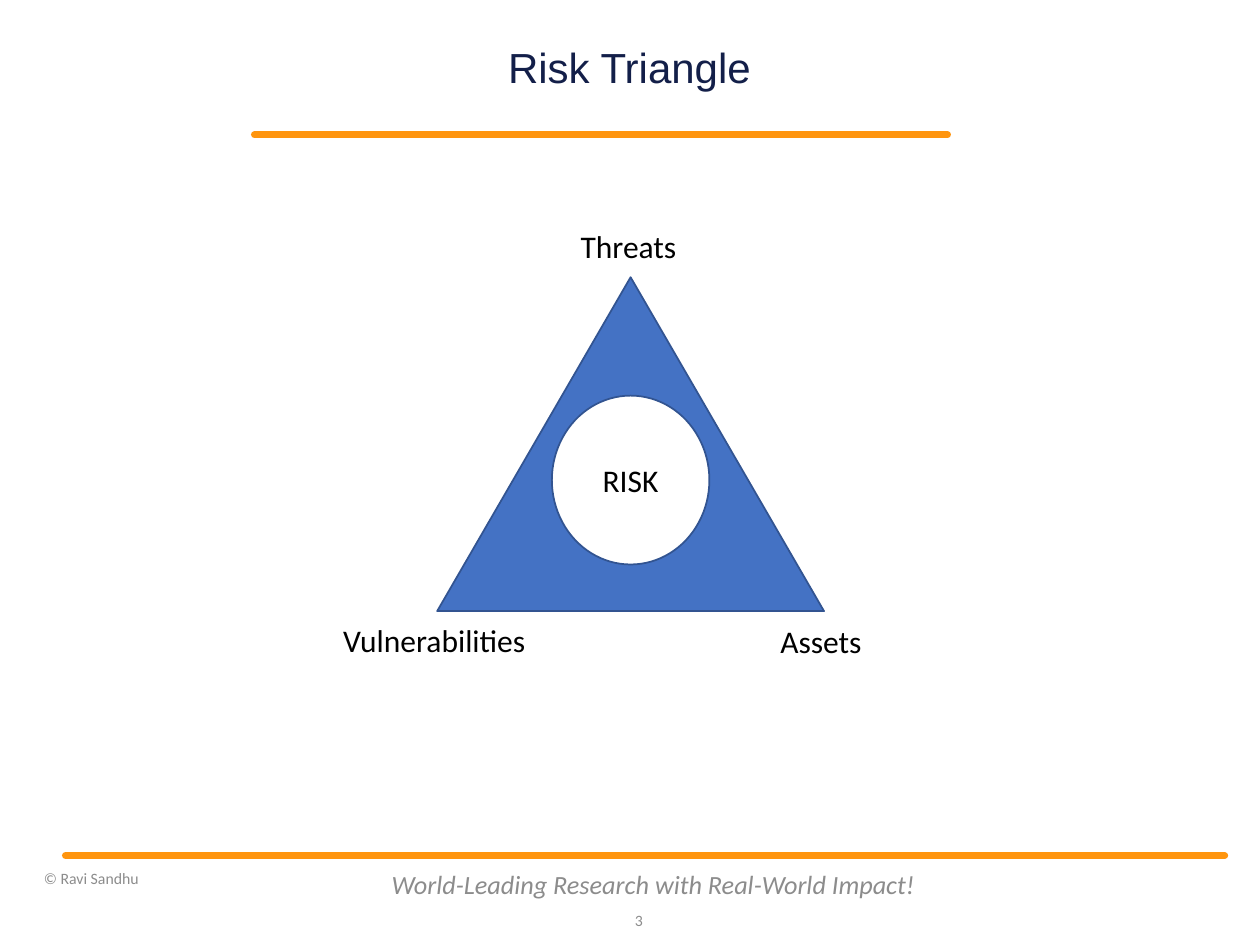
from pptx import Presentation
from pptx.dml.color import RGBColor
from pptx.enum.shapes import MSO_CONNECTOR, MSO_SHAPE
from pptx.enum.text import MSO_ANCHOR as ANCHOR, PP_ALIGN as ALIGN
from pptx.oxml.ns import qn
from pptx.util import Inches, Pt

ORANGE, NAVY, GRAY = "FF950E", "131F49", "8C8C8C"
BLUE, OUTLINE, WHITE, BLACK = "4472C4", "325491", "FFFFFF", "000000"


def rgb(value):
    """Turn a hex string into a colour."""
    return RGBColor.from_string(value)


def set_text(s, text, size, color, align=ALIGN.LEFT, font="Calibri", italic=False):
    """Write one formatted paragraph into a shape and return it."""
    s.text_frame.text = text
    p = s.text_frame.paragraphs[0]
    p.alignment = align
    f = p.runs[0].font
    f.name, f.size, f.italic = font, Pt(size), italic
    f.color.rgb = rgb(color)
    return p


def add_text(slide, x, y, w, h, text, size, color, wrap=True, anchor=ANCHOR.MIDDLE, **style):
    """Add a text box and return it."""
    s = slide.shapes.add_textbox(Inches(x), Inches(y), Inches(w), Inches(h))
    s.text_frame.word_wrap = wrap
    s.text_frame.vertical_anchor = anchor
    set_text(s, text, size, color, **style)
    return s


def add_rule(slide, x, y, w):
    """Add a thick horizontal rule with round ends."""
    s = slide.shapes.add_connector(
        MSO_CONNECTOR.STRAIGHT, Inches(x), Inches(y), Inches(x + w), Inches(y))
    s.line.color.rgb = rgb(ORANGE)
    s.line.width = Pt(4)
    sp_pr = s._element.spPr
    sp_pr.find(qn("a:ln")).set("cap", "rnd")
    sp_pr.append(sp_pr.makeelement(qn("a:effectLst"), {}))


def add_solid(slide, kind, x, y, w, h, fill):
    """Add a filled, thinly outlined preset shape and return it."""
    s = slide.shapes.add_shape(kind, Inches(x), Inches(y), Inches(w), Inches(h))
    s.shadow.inherit = False
    s.fill.solid()
    s.fill.fore_color.rgb = rgb(fill)
    s.line.color.rgb = rgb(OUTLINE)
    s.line.width = Pt(1)
    return s


def add_header(slide, x, y, w, h):
    """Place the title in its box and the rule below it."""
    s = add_text(slide, x, y, w, h, "Risk Triangle", 24, NAVY, align=ALIGN.CENTER, font="Arial")
    tf = s.text_frame
    tf.margin_left = tf.margin_right = tf.margin_top = tf.margin_bottom = 0
    tf.paragraphs[0].line_spacing = 0.9
    add_rule(slide, x - 0.35, y + h + 0.26, 5.5)


def add_risk_triangle(slide, x, y, w, h):
    """Place the triangle, its central circle and the corner labels."""
    add_solid(slide, MSO_SHAPE.ISOSCELES_TRIANGLE, x, y, w, h, BLUE)
    d = 1.25
    circle = add_solid(slide, MSO_SHAPE.OVAL, x + (w - d) / 2, y + 0.94, d, 1.34, WHITE)
    circle.text_frame.vertical_anchor = ANCHOR.MIDDLE
    set_text(circle, "RISK", 18, BLACK, align=ALIGN.CENTER)
    corners = [
        ("Threats", w / 2 - 0.01, -0.45, 0.97),
        ("Vulnerabilities", -0.01, h + 0.03, 1.67),
        ("Assets", w - 0.02, h + 0.04, 0.85),
    ]
    for label, center, top, width in corners:
        add_text(slide, x + center - width / 2, y + top, width, 0.4, label, 18, BLACK,
                 wrap=False, anchor=ANCHOR.TOP)


def add_footer(slide, x, y, w):
    """Place the footer rule, motto, page number and copyright line."""
    add_rule(slide, x, y, w)
    add_text(slide, x + 2.48, y + 0.03, 4.37, 0.4,
             "World-Leading Research with Real-World Impact!", 15, GRAY,
             align=ALIGN.CENTER, italic=True)
    add_text(slide, x + 4.28, y + 0.31, 0.4, 0.4, "3", 9, GRAY, align=ALIGN.RIGHT)
    add_text(slide, x - 0.27, y, 2.75, 0.36, "© Ravi Sandhu", 9, GRAY)


def main():
    """Build the slide and save it."""
    prs = Presentation()
    prs.slide_width, prs.slide_height = Inches(10), Inches(7.5)
    slide = prs.slides.add_slide(prs.slide_layouts[6])
    add_header(slide, 2.37, 0.3, 5.25, 0.51)
    add_risk_triangle(slide, 3.47, 2.2, 3.07, 2.65)
    add_footer(slide, 0.52, 6.79, 9.2)
    prs.save("out.pptx")


if __name__ == "__main__":
    main()
